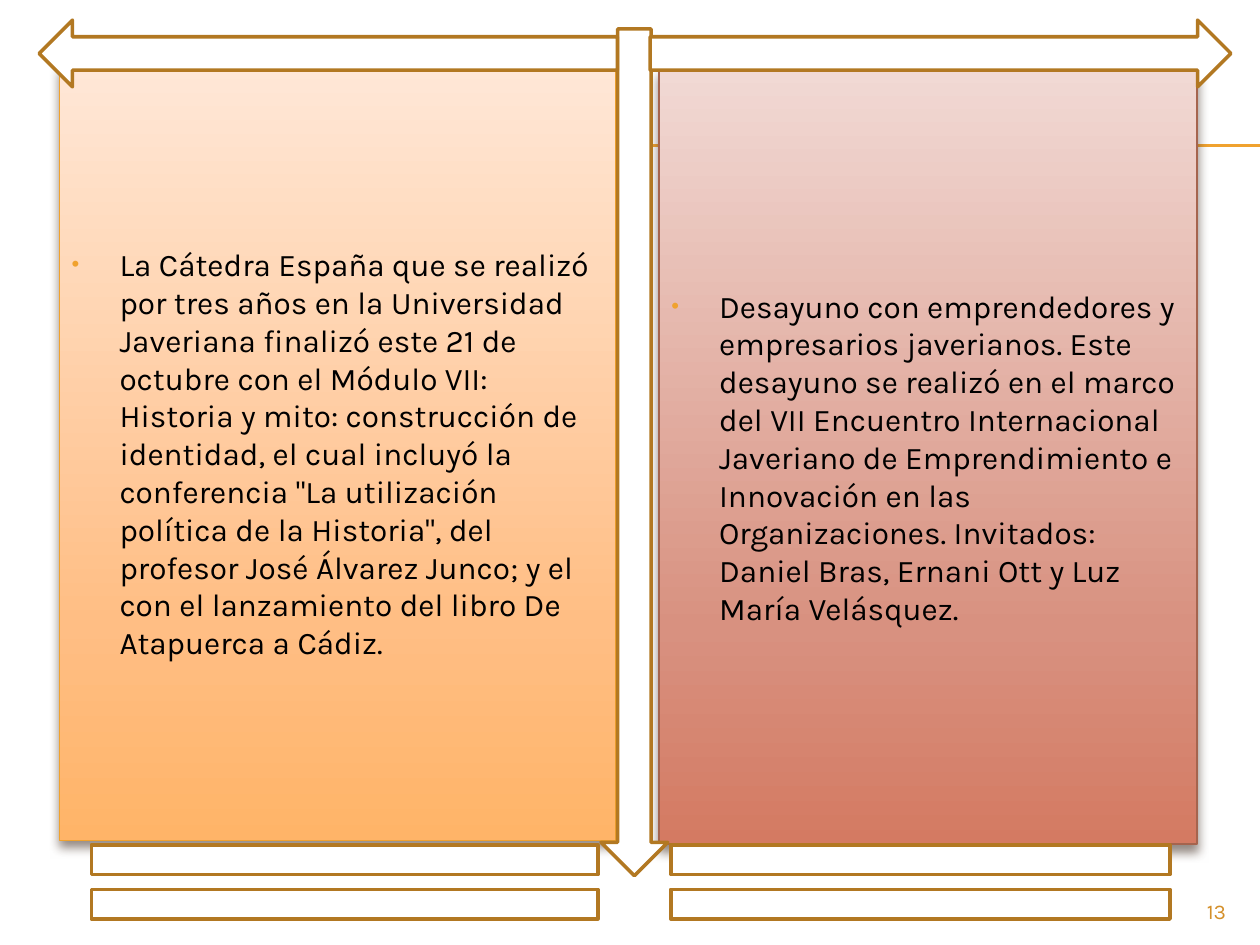
from dataclasses import dataclass

from lxml.etree import SubElement
from pptx import Presentation
from pptx.dml.color import RGBColor
from pptx.enum.shapes import MSO_CONNECTOR as Connector
from pptx.enum.shapes import MSO_SHAPE as Preset
from pptx.enum.text import MSO_ANCHOR as Anchor
from pptx.enum.text import PP_ALIGN as Align
from pptx.oxml.ns import qn
from pptx.util import Inches, Pt


@dataclass(frozen=True)
class Theme:
    font: str = "Karla"
    body_size: float = 18
    number_size: float = 12
    text: str = "000000"
    white: str = "FFFFFF"
    accent: str = "F0A22E"
    rust: str = "A5644E"
    outline: str = "B27822"
    number: str = "D48F29"
    shadow: str = "4E3B30"


@dataclass(frozen=True)
class Box:
    left: float
    top: float
    width: float
    height: float

    def lengths(self) -> list:
        return [Inches(side) for side in (self.left, self.top, self.width, self.height)]


@dataclass(frozen=True)
class Panel:
    box: Box
    stops: tuple
    line: str
    text: str


@dataclass(frozen=True)
class Outline:
    preset: Preset
    box: Box


THEME = Theme()

PANELS = (
    Panel(
        Box(0.47, 0.52, 4.42, 6.15),
        ((0, "FFE7D7"), (72, "FFBE84"), (100, "FFB468")),
        THEME.accent,
        "La Cátedra España que se realizó por tres años en la Universidad Javeriana "
        "finalizó este 21 de octubre con el Módulo VII: Historia y mito: construcción "
        'de identidad, el cual incluyó la conferencia "La utilización política de la '
        'Historia", del profesor José Álvarez Junco; y el con el lanzamiento del libro '
        "De Atapuerca a Cádiz.",
    ),
    Panel(
        Box(5.23, 0.55, 4.27, 6.15),
        ((0, "F1D9D4"), (72, "D89180"), (100, "D47A62")),
        THEME.rust,
        "Desayuno con emprendedores y empresarios javerianos. Este desayuno se realizó "
        "en el marco del VII Encuentro Internacional Javeriano de Emprendimiento e "
        "Innovación en las Organizaciones. Invitados: Daniel Bras, Ernani Ott y Luz "
        "María Velásquez.",
    ),
)

OUTLINES = (
    Outline(Preset.DOWN_ARROW, Box(4.77, 0.23, 0.53, 6.72)),
    Outline(Preset.RIGHT_ARROW, Box(5.16, 0.16, 4.61, 0.53)),
    Outline(Preset.LEFT_ARROW, Box(0.31, 0.16, 4.59, 0.53)),
    Outline(Preset.MATH_EQUAL, Box(0, 6.5, 5.47, 1)),
    Outline(Preset.MATH_EQUAL, Box(4.61, 6.5, 5.39, 1)),
)


def apply(target, formats: dict) -> None:
    """Set every attribute named in the format values."""
    for name, value in formats.items():
        setattr(target, name, value)


def add_node(parent, tag: str, **values):
    """Append a drawing element with its attributes as text."""
    return SubElement(parent, qn(tag), {name: str(value) for name, value in values.items()})


def set_line(line, color: str, width: float) -> None:
    """Give a line its colour and its width in points."""
    line.color.rgb = RGBColor.from_string(color)
    line.width = Pt(width)


def write(para, text: str, size: float, color: str) -> None:
    """Add one formatted span to a paragraph."""
    span = para.add_run()
    span.text = text
    apply(span.font, {"name": THEME.font, "size": Pt(size)})
    span.font.color.rgb = RGBColor.from_string(color)


def add_rule(page, top: float) -> None:
    """Draw one thin rule reaching the right edge of the page."""
    rule = page.shapes.add_connector(
        Connector.STRAIGHT, Inches(0.56), Inches(top), Inches(10), Inches(top)
    )
    set_line(rule.line, THEME.accent, 0.75)
    add_node(rule._element.spPr, "a:effectLst")


def set_gradient(shape, stops: tuple) -> None:
    """Fill a shape from top to bottom through the given stops."""
    shape.fill.gradient()
    shape.fill.gradient_angle = 270
    stop_list = shape._element.spPr.find(qn("a:gradFill")).find(qn("a:gsLst"))
    for stop in list(stop_list):
        stop_list.remove(stop)
    for percent, color in stops:
        add_node(add_node(stop_list, "a:gs", pos=percent * 1000), "a:srgbClr", val=color)


def set_shadow(shape) -> None:
    """Cast a soft shadow below a shape."""
    shape.shadow.inherit = False
    effects = shape._element.spPr.find(qn("a:effectLst"))
    shadow = add_node(
        effects, "a:outerShdw", blurRad=Pt(6), dist=Pt(4), dir=90 * 60000, rotWithShape=0
    )
    add_node(add_node(shadow, "a:srgbClr", val=THEME.shadow), "a:alpha", val=60000)


def set_bullet(para) -> None:
    """Give a paragraph a small coloured bullet and a hanging indent."""
    properties = para._p.get_or_add_pPr()
    apply_indent = {"marL": Inches(0.38), "indent": -Inches(0.38)}
    for name, value in apply_indent.items():
        properties.set(name, str(value))
    add_node(add_node(properties, "a:buClr"), "a:srgbClr", val=THEME.accent)
    add_node(properties, "a:buSzPct", val=70000)
    add_node(properties, "a:buFont", typeface="Arial")
    add_node(properties, "a:buChar", char="•")


def add_panel(page, panel: Panel) -> None:
    """Draw a shaded panel with its bulleted text."""
    shape = page.shapes.add_shape(Preset.RECTANGLE, *panel.box.lengths())
    set_gradient(shape, panel.stops)
    set_line(shape.line, panel.line, 0.79)
    set_shadow(shape)
    apply(shape.text_frame, {"word_wrap": True, "vertical_anchor": Anchor.MIDDLE})
    para = shape.text_frame.paragraphs[0]
    apply(para, {"alignment": Align.LEFT, "space_before": Pt(0.2 * THEME.body_size)})
    set_bullet(para)
    write(para, panel.text, THEME.body_size, THEME.text)


def add_outline(page, outline: Outline) -> None:
    """Draw a white preset shape with a coloured outline."""
    shape = page.shapes.add_shape(outline.preset, *outline.box.lengths())
    shape.fill.solid()
    shape.fill.fore_color.rgb = RGBColor.from_string(THEME.white)
    set_line(shape.line, THEME.outline, 2)
    shape.shadow.inherit = False


def add_page_number(page, text: str, box: Box) -> None:
    """Write the page number aligned to the right."""
    frame = page.shapes.add_textbox(*box.lengths()).text_frame
    frame.word_wrap = True
    para = frame.paragraphs[0]
    para.alignment = Align.RIGHT
    write(para, text, THEME.number_size, THEME.number)


def main() -> None:
    """Build the deck and save it."""
    deck = Presentation()
    apply(deck, {"slide_width": Inches(10), "slide_height": Inches(7.5)})
    page = deck.slides.add_slide(deck.slide_layouts[6])
    for top in (1.15, 1.16):
        add_rule(page, top)
    for panel in PANELS:
        add_panel(page, panel)
    for outline in OUTLINES:
        add_outline(page, outline)
    add_page_number(page, "13", Box(9, 7.08, 0.83, 0.27))
    deck.save("out.pptx")


if __name__ == "__main__":
    main()
